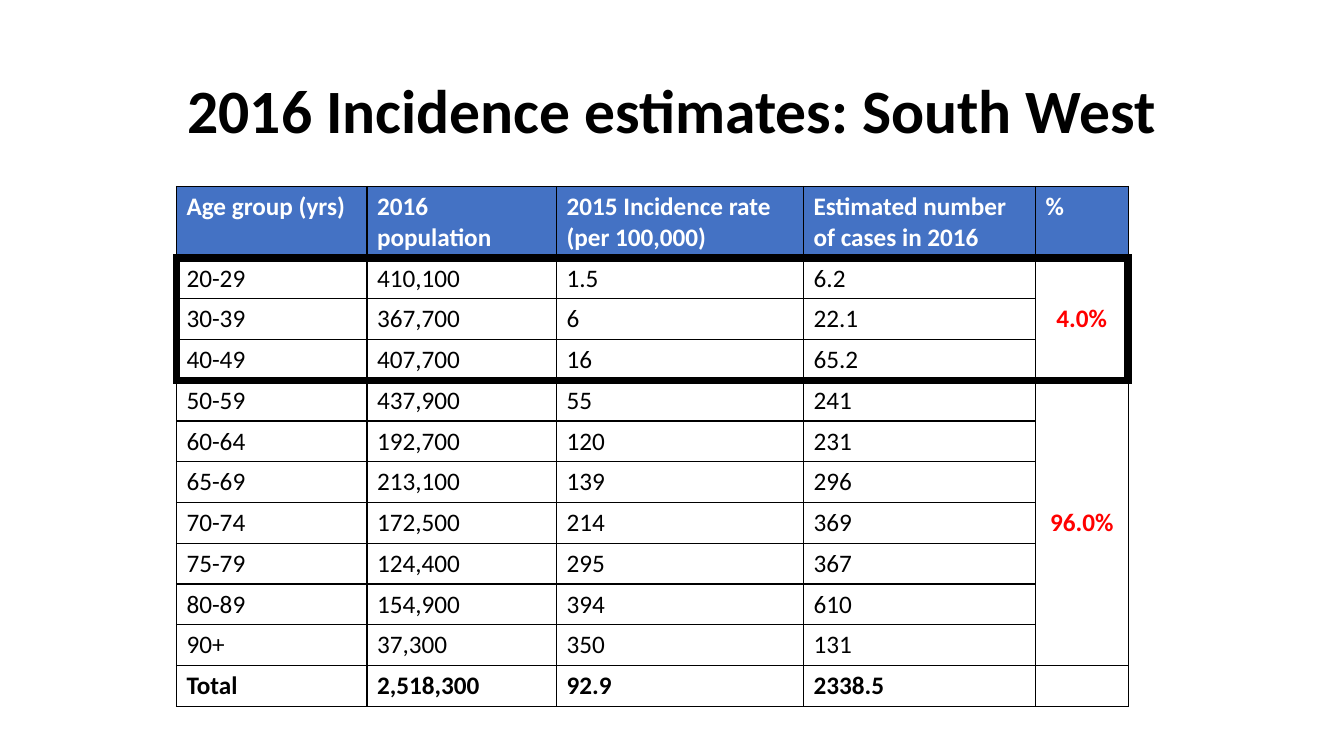
from lxml import etree
from pptx import Presentation
from pptx.dml.color import RGBColor
from pptx.enum.text import MSO_ANCHOR, PP_ALIGN
from pptx.oxml.ns import qn
from pptx.util import Inches, Pt

LEFT, CENTER = PP_ALIGN.LEFT, PP_ALIGN.CENTER
TOP, MIDDLE = MSO_ANCHOR.TOP, MSO_ANCHOR.MIDDLE

BLACK = RGBColor(0x00, 0x00, 0x00)
WHITE = RGBColor(0xFF, 0xFF, 0xFF)
BLUE = RGBColor(0x44, 0x72, 0xC4)
RED = RGBColor(0xFF, 0x00, 0x00)

HEADER = ["Age group (yrs)", "2016 population",
          "2015 Incidence rate\n(per 100,000)",
          "Estimated number of cases in 2016", "%"]
AGE_GROUPS = [
    ["20-29", "410,100", "1.5", "6.2", "4.0%"],
    ["30-39", "367,700", "6", "22.1", ""],
    ["40-49", "407,700", "16", "65.2", ""],
    ["50-59", "437,900", "55", "241", "96.0%"],
    ["60-64", "192,700", "120", "231", ""],
    ["65-69", "213,100", "139", "296", ""],
    ["70-74", "172,500", "214", "369", ""],
    ["75-79", "124,400", "295", "367", ""],
    ["80-89", "154,900", "394", "610", ""],
    ["90+", "37,300", "350", "131", ""],
]
TOTAL = ["Total", "2,518,300", "92.9", "2338.5", ""]
COL_WIDTHS = [1.89, 1.88, 2.45, 2.3, 0.92]
TABLE_HEIGHT, HEADER_HEIGHT = 5.16, 0.71
PERCENT_COL = 4
PERCENT_SPANS = {1: 3, 4: 7}  # first row: number of rows
FRAME_FIRST, FRAME_LAST = 1, 3  # rows inside the heavy frame
THIN, HEAVY = 1, 6


class SlideBuilder:
    def __init__(self, prs, font="Calibri"):
        self.s = prs.slides.add_slide(prs.slide_layouts[6])
        self.font = font

    def add_text(self, tf, text, size, color, bold=False, align=LEFT, spacing=1.0):
        formats = {"name": self.font, "size": Pt(size), "bold": bold}
        for i, line in enumerate(text.split("\n")):
            p = tf.add_paragraph() if i else tf.paragraphs[0]
            p.alignment, p.line_spacing = align, spacing
            r = p.add_run()
            r.text = line
            for name, value in formats.items():
                setattr(r.font, name, value)
            r.font.color.rgb = color

    def title(self, text, left, top, width, height):
        box = self.s.shapes.add_textbox(*map(Inches, (left, top, width, height)))
        tf = box.text_frame
        tf.word_wrap = True
        tf.vertical_anchor = MIDDLE
        self.add_text(tf, text, 44, BLACK, True, CENTER, 0.9)

    def table(self, rows, left, top):
        width = sum(COL_WIDTHS)
        shape = self.s.shapes.add_table(
            len(rows), len(COL_WIDTHS),
            *map(Inches, (left, top, width, TABLE_HEIGHT)))
        table = shape.table
        table.first_row = table.horz_banding = False
        for col, col_width in zip(table.columns, COL_WIDTHS):
            col.width = Inches(col_width)
        body_height = (TABLE_HEIGHT - HEADER_HEIGHT) / (len(rows) - 1)
        for i, row in enumerate(table.rows):
            row.height = Inches(body_height if i else HEADER_HEIGHT)
        for first, count in PERCENT_SPANS.items():
            table.cell(first, PERCENT_COL).merge(
                table.cell(first + count - 1, PERCENT_COL))
        for i, values in enumerate(rows):
            for j, text in enumerate(values):
                self.cell(table.cell(i, j), i, j, text, i == len(rows) - 1)

    def cell(self, cell, i, j, text, is_total):
        is_header = i == 0
        is_percent = j == PERCENT_COL and i in PERCENT_SPANS
        color = WHITE if is_header else RED if is_percent else BLACK
        bold = is_header or is_percent or is_total
        self.add_text(cell.text_frame, text, 18, color, bold,
                      CENTER if is_percent else LEFT)
        cell.vertical_anchor = MIDDLE if is_percent else TOP
        self.borders(cell, i, j)
        if is_header:
            cell.fill.solid()
            cell.fill.fore_color.rgb = BLUE
        else:
            cell.fill.background()

    def borders(self, cell, i, j):
        """Thin black grid, with heavy edges around the framed rows."""
        last = i + (cell.span_height if cell.is_merge_origin else 1) - 1
        framed = FRAME_FIRST <= i <= FRAME_LAST
        heavy = {
            "a:lnL": framed and j == 0,
            "a:lnR": framed and j == PERCENT_COL,
            "a:lnT": i in (FRAME_FIRST, FRAME_LAST + 1),
            "a:lnB": last in (FRAME_FIRST - 1, FRAME_LAST),
        }
        tc_pr = cell._tc.get_or_add_tcPr()
        for tag, is_heavy in heavy.items():
            width = Pt(HEAVY if is_heavy else THIN)
            ln = etree.SubElement(tc_pr, qn(tag), w=str(width))
            fill = etree.SubElement(ln, qn("a:solidFill"))
            etree.SubElement(fill, qn("a:srgbClr"), val=str(BLACK))


def main():
    prs = Presentation()
    prs.slide_width, prs.slide_height = Inches(13.33), Inches(7.5)
    slide = SlideBuilder(prs)
    slide.title("2016 Incidence estimates: South West", 0.92, 0.4, 11.5, 1.45)
    slide.table([HEADER, *AGE_GROUPS, TOTAL], 1.75, 1.85)
    prs.save("out.pptx")


if __name__ == "__main__":
    main()
